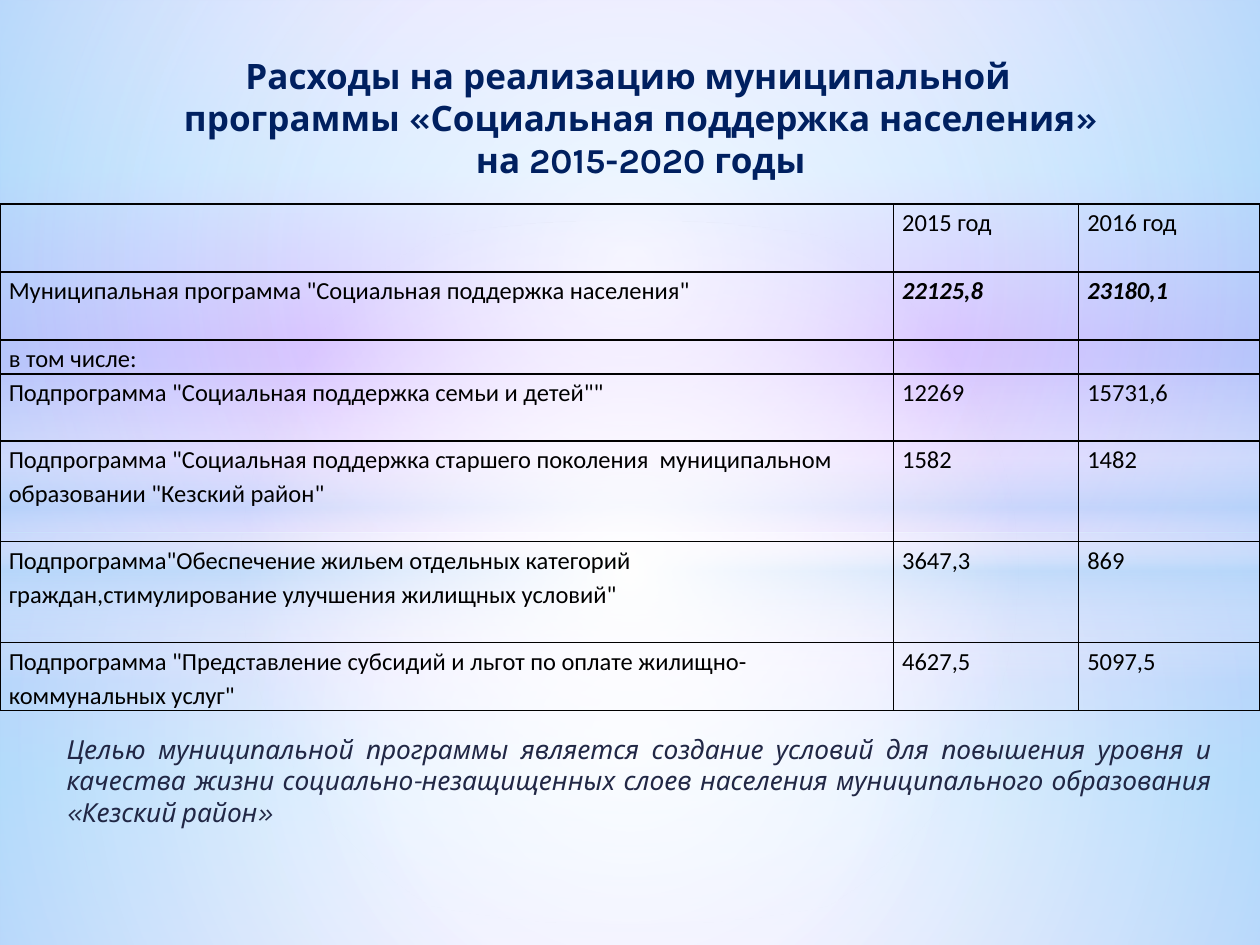
from dataclasses import dataclass
from lxml.etree import SubElement
from pptx import Presentation
from pptx.dml.color import RGBColor
from pptx.enum.shapes import MSO_SHAPE
from pptx.enum.text import MSO_ANCHOR, PP_ALIGN
from pptx.oxml import parse_xml
from pptx.oxml.ns import nsdecls, qn
from pptx.util import Inches, Pt


@dataclass(frozen=True)
class Theme:
    navy: str = "002060"
    slate: str = "212745"
    black: str = "000000"
    white: str = "FFFFFF"
    sky: str = "B4DCFA"
    lilac: str = "CCCCFF"
    blue: str = "99CCFF"
    violet: str = "9966FF"
    mauve: str = "CC99FF"
    display: str = "Karla"
    body: str = "Calibri"
    title_size: int = 20
    goal_size: int = 15
    cell_size: int = 14


T = Theme()
W, H = 10, 7.5

BACKGROUND = [(0, T.lilac, 100), (18, T.blue, 100), (36, T.violet, 100),
              (61, T.mauve, 100), (82, T.blue, 100), (100, T.lilac, 100)]
LOWER = [(0, T.white, 91), (37, T.white, 76), (100, T.sky, 79)]
UPPER = [(0, T.white, 89), (48, T.white, 62), (100, T.sky, 79)]
BAND = [(0, T.white, 0), (29, T.white, 30), (45, T.sky, 40),
        (55, T.white, 26), (65, T.sky, 60), (100, T.white, 0)]
GLOW = [(0, T.white, 100), (54, T.white, 0), (100, T.white, 0)]

TITLE = ("Расходы на реализацию муниципальной программы "
         "«Социальная поддержка населения» на 2015-2020 годы")
GOAL = ("Целью муниципальной программы является создание условий для "
        "повышения уровня и качества жизни социально-незащищенных слоев "
        "населения муниципального образования «Кезский район»")

COLS = [7.09, 1.47, 1.44]
ROWS = [
    (0.54, "", "2015 год", "2016 год"),
    (0.54, 'Муниципальная программа "Социальная поддержка населения"',
     "22125,8", "23180,1"),
    (0.27, "в том числе:", "", ""),
    (0.53, 'Подпрограмма "Социальная поддержка семьи и детей""',
     "12269", "15731,6"),
    (0.8, 'Подпрограмма "Социальная поддержка старшего поколения  '
     'муниципальном образовании "Кезский район"', "1582", "1482"),
    (0.8, 'Подпрограмма"Обеспечение жильем отдельных категорий '
     'граждан,стимулирование улучшения жилищных условий"', "3647,3", "869"),
    (0.54, 'Подпрограмма "Представление субсидий и льгот по оплате '
     'жилищно-коммунальных услуг"', "4627,5", "5097,5"),
]
TOTAL_ROW = 1


def assign(obj, values):
    for name, value in values.items():
        setattr(obj, name, value)


def add_run(p, text, color, **font):
    r = p.add_run()
    r.text = text
    assign(r.font, font)
    r.font.color.rgb = RGBColor.from_string(color)


def set_gradient(fill, holder, stops, radial):
    fill.solid()
    gs = "".join(
        f'<a:gs pos="{pos * 1000}"><a:srgbClr val="{color}">'
        f'<a:alpha val="{alpha * 1000}"/></a:srgbClr></a:gs>'
        for pos, color, alpha in stops)
    shade = ('<a:path path="circle"><a:fillToRect l="50000" t="50000" '
             'r="50000" b="50000"/></a:path>' if radial
             else '<a:lin ang="5400000" scaled="0"/>')
    solid = holder.find(qn("a:solidFill"))
    holder.replace(solid, parse_xml(
        f'<a:gradFill {nsdecls("a")} rotWithShape="1">'
        f'<a:gsLst>{gs}</a:gsLst>{shade}</a:gradFill>'))


def add_backdrop(s, box):
    x, y, w, h = box
    fill = s.background.fill
    fill.solid()
    set_gradient(fill, s.element.find(".//" + qn("p:bgPr")), BACKGROUND, False)
    split = 0.564 * h
    layers = [
        (MSO_SHAPE.RECTANGLE, split, h - split, LOWER, True),
        (MSO_SHAPE.RECTANGLE, 0, split, UPPER, True),
        (MSO_SHAPE.RECTANGLE, 2.9 / H * h, h / 3, BAND, False),
        (MSO_SHAPE.OVAL, 1.75 / H * h, 0.744 * h, GLOW, True),
    ]
    for kind, top, height, stops, radial in layers:
        sp = s.shapes.add_shape(kind, Inches(x), Inches(y + top),
                                Inches(w), Inches(height))
        sp.shadow.inherit = False
        sp.line.fill.background()
        set_gradient(sp.fill, sp.element.spPr, stops, radial)


def add_text(s, box, text, color, paragraph, **font):
    tf = s.shapes.add_textbox(*map(Inches, box)).text_frame
    assign(tf, dict(word_wrap=True, vertical_anchor=MSO_ANCHOR.TOP))
    p = tf.paragraphs[0]
    assign(p, paragraph)
    add_run(p, text, color, name=T.display, **font)
    return p


def add_title(s, box):
    p = add_text(s, box, TITLE, T.navy, dict(alignment=PP_ALIGN.CENTER),
                 size=Pt(T.title_size), bold=True)
    pPr = p._p.get_or_add_pPr()
    pPr.set("marL", str(Inches(0.2)))
    pPr.set("indent", str(Inches(-0.5)))


def add_goal(s, box):
    add_text(s, box, GOAL, T.slate,
             dict(alignment=PP_ALIGN.JUSTIFY, space_before=Pt(3),
                  space_after=Pt(3)),
             size=Pt(T.goal_size), italic=True)


def set_borders(cell):
    tcPr = cell._tc.get_or_add_tcPr()
    for i, side in enumerate(("lnL", "lnR", "lnT", "lnB")):
        tcPr.insert(i, parse_xml(
            f'<a:{side} {nsdecls("a")} w="{Pt(1)}"><a:solidFill>'
            f'<a:srgbClr val="{T.black}"/></a:solidFill></a:{side}>'))


def fill_cell(cell, text, strong):
    assign(cell, dict(margin_left=Inches(0.07), margin_right=Inches(0.07),
                      margin_top=0, margin_bottom=0))
    cell.fill.background()
    set_borders(cell)
    p = cell.text_frame.paragraphs[0]
    p.line_spacing = 1.15
    if text:
        add_run(p, text, T.black, name=T.body, size=Pt(T.cell_size),
                bold=strong, italic=strong)
    else:
        SubElement(p._p, qn("a:endParaRPr"), sz=str(T.cell_size * 100))


def add_costs(s, box):
    table = s.shapes.add_table(len(ROWS), len(COLS), *map(Inches, box)).table
    assign(table, dict(first_row=False, horz_banding=False))
    for column, width in zip(table.columns, COLS):
        column.width = Inches(width)
    for i, (height, *texts) in enumerate(ROWS):
        table.rows[i].height = Inches(height)
        for j, text in enumerate(texts):
            fill_cell(table.cell(i, j), text, i == TOTAL_ROW and j > 0)


def main():
    prs = Presentation()
    assign(prs, dict(slide_width=Inches(W), slide_height=Inches(H)))
    s = prs.slides.add_slide(prs.slide_layouts[6])
    add_backdrop(s, (0, 0, W, H))
    add_title(s, (1.06, 0.38, 7.85, 0.93))
    add_goal(s, (0.43, 5.77, 9.29, 1.73))
    add_costs(s, (0, 1.62, W, 4.02))
    prs.save("out.pptx")


if __name__ == "__main__":
    main()
